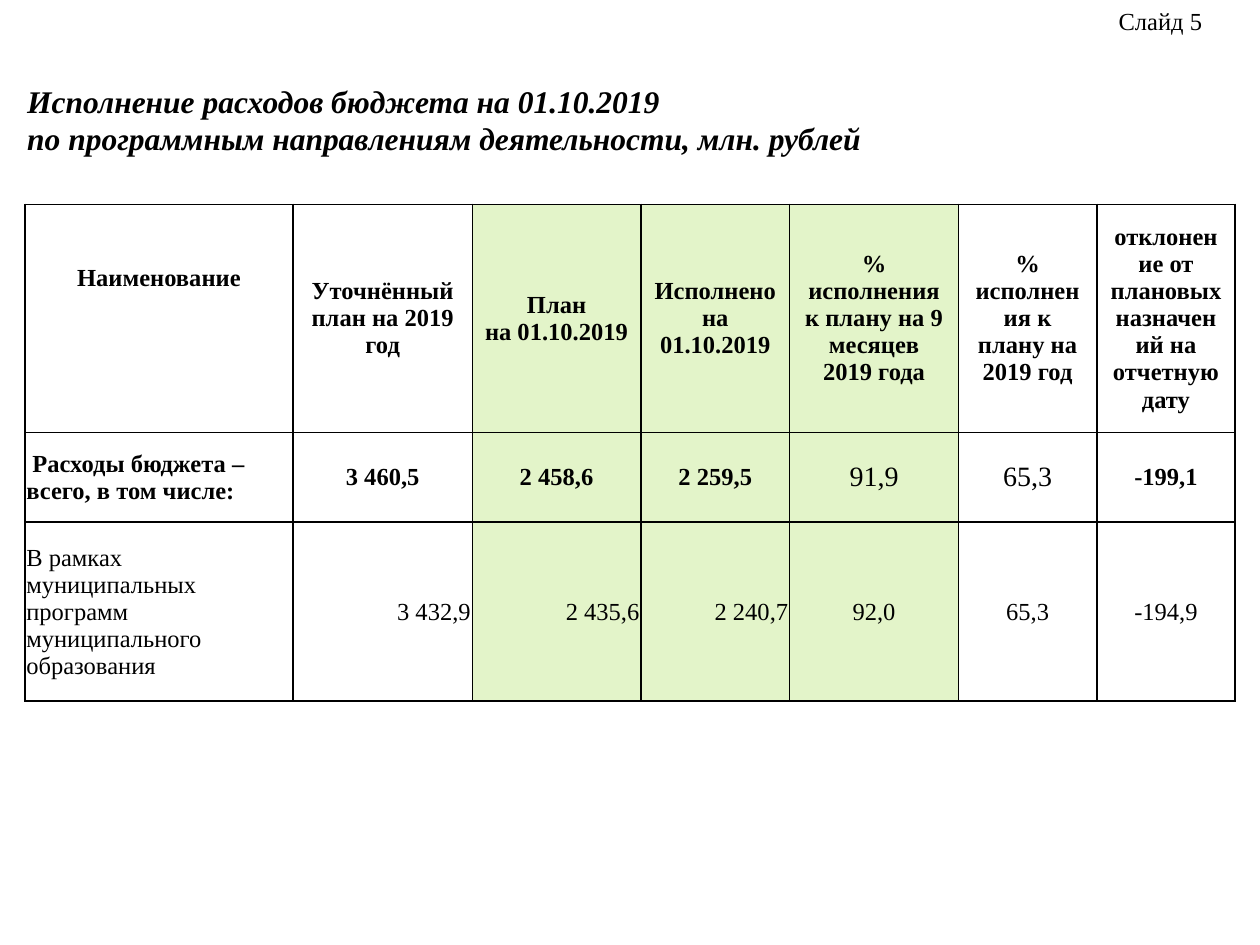
from dataclasses import dataclass

from lxml import etree
from pptx import Presentation
from pptx.dml.color import RGBColor
from pptx.enum.text import MSO_ANCHOR, MSO_AUTO_SIZE, PP_ALIGN
from pptx.oxml.ns import qn
from pptx.util import Cm, Pt

LEFT, CENTER, RIGHT = PP_ALIGN.LEFT, PP_ALIGN.CENTER, PP_ALIGN.RIGHT
TOP, MIDDLE = MSO_ANCHOR.TOP, MSO_ANCHOR.MIDDLE
FIT_SHAPE = MSO_AUTO_SIZE.SHAPE_TO_FIT_TEXT


@dataclass(frozen=True)
class Theme:
    font: str = "Times New Roman"
    ink: str = "000000"
    paper: str = "FFFFFF"
    highlight: str = "E3F4C9"
    title: int = 18
    body: int = 14
    percent: int = 16
    border: int = 1


THEME = Theme()

COLUMN_WIDTHS = [5.41, 3.61, 3.4, 3, 3.4, 2.79, 2.79]
ROW_HEIGHTS = [4.6, 1.8, 3.61]
HIGHLIGHTED_COLUMNS = (2, 3, 4)
PERCENT_COLUMNS = (4, 5)
HEADER_MARGINS = (0.25, 0.13, 0.25, 0.13)
NAME_HEADER_MARGINS = (0.25, 1.22, 0.25, 0.13)
TOTAL_MARGINS = (0.18, 0, 0.18, 0)
TIGHT_MARGINS = (0.03, 0.03, 0.03, 0)

HEADERS = [
    "Наименование",
    "Уточнённый план на 2019 год",
    "План\nна 01.10.2019",
    "Исполнено на 01.10.2019",
    "% исполнения к плану на 9 месяцев 2019 года",
    "% исполнения к плану на 2019 год",
    "отклонение от плановых назначений на отчетную дату",
]
TOTALS = [" Расходы бюджета –всего, в том числе:",
          "3 460,5", "2 458,6", "2 259,5", "91,9", "65,3", "-199,1"]
PROGRAMS = ["В рамках муниципальных программ муниципального образования",
            "3 432,9", "2 435,6", "2 240,7", "92,0", "65,3", "-194,9"]


def write(frame, text, size, bold=False, italic=False, align=LEFT):
    frame.text = text
    for paragraph in frame.paragraphs:
        paragraph.alignment = align
        font = paragraph.font
        font.name = THEME.font
        font.size = Pt(size)
        font.bold = bold
        font.italic = italic
        font.color.rgb = RGBColor.from_string(THEME.ink)


def add_label(slide, box, text, size, **style):
    frame = slide.shapes.add_textbox(*map(Cm, box)).text_frame
    frame.word_wrap = True
    frame.auto_size = FIT_SHAPE
    write(frame, text, size, **style)


def add_borders(cell):
    properties = cell._tc.get_or_add_tcPr()
    for position, side in enumerate(("lnL", "lnR", "lnT", "lnB")):
        line = etree.Element(qn(f"a:{side}"), w=str(Pt(THEME.border)))
        fill = etree.SubElement(line, qn("a:solidFill"))
        etree.SubElement(fill, qn("a:srgbClr"), val=THEME.ink)
        properties.insert(position, line)


def fill_cell(cell, column, text, margins, anchor=MIDDLE, **style):
    (cell.margin_left, cell.margin_top,
     cell.margin_right, cell.margin_bottom) = map(Cm, margins)
    cell.vertical_anchor = anchor
    color = THEME.highlight if column in HIGHLIGHTED_COLUMNS else THEME.paper
    cell.fill.solid()
    cell.fill.fore_color.rgb = RGBColor.from_string(color)
    add_borders(cell)
    write(cell.text_frame, text, **style)


def fill_header(table):
    for column, text in enumerate(HEADERS):
        is_name = column == 0
        fill_cell(table.cell(0, column), column, text,
                  NAME_HEADER_MARGINS if is_name else HEADER_MARGINS,
                  TOP if is_name else MIDDLE,
                  size=THEME.body, bold=True, align=CENTER)


def fill_totals(table):
    for column, text in enumerate(TOTALS):
        is_name = column == 0
        is_percent = column in PERCENT_COLUMNS
        fill_cell(table.cell(1, column), column, text,
                  TIGHT_MARGINS if is_name else TOTAL_MARGINS,
                  size=THEME.percent if is_percent else THEME.body,
                  bold=not is_percent, align=LEFT if is_name else CENTER)


def fill_programs(table):
    alignments = [LEFT] + [RIGHT] * 3 + [CENTER] * 3
    for column, (text, align) in enumerate(zip(PROGRAMS, alignments)):
        fill_cell(table.cell(2, column), column, text, TIGHT_MARGINS,
                  size=THEME.body, align=align)


def add_budget_table(slide):
    table = slide.shapes.add_table(
        len(ROW_HEIGHTS), len(COLUMN_WIDTHS), Cm(0.5), Cm(4.12),
        Cm(sum(COLUMN_WIDTHS)), Cm(sum(ROW_HEIGHTS))).table
    table.first_row = False
    table.horz_banding = False
    for column, width in zip(table.columns, COLUMN_WIDTHS):
        column.width = Cm(width)
    for row, height in zip(table.rows, ROW_HEIGHTS):
        row.height = Cm(height)
    fill_header(table)
    fill_totals(table)
    fill_programs(table)


def main():
    deck = Presentation()
    deck.slide_width, deck.slide_height = Cm(25.4), Cm(19.05)
    slide = deck.slides.add_slide(deck.slide_layouts[6])
    add_label(slide, (0.3, 1.52, 18.39, 1.8),
              "Исполнение расходов бюджета на 01.10.2019\n"
              "по программным направлениям деятельности, млн. рублей",
              THEME.title, bold=True, italic=True)
    add_budget_table(slide)
    add_label(slide, (22.3, 0, 3.1, 0.86), "Слайд 5", THEME.body)
    deck.save("out.pptx")


if __name__ == "__main__":
    main()
